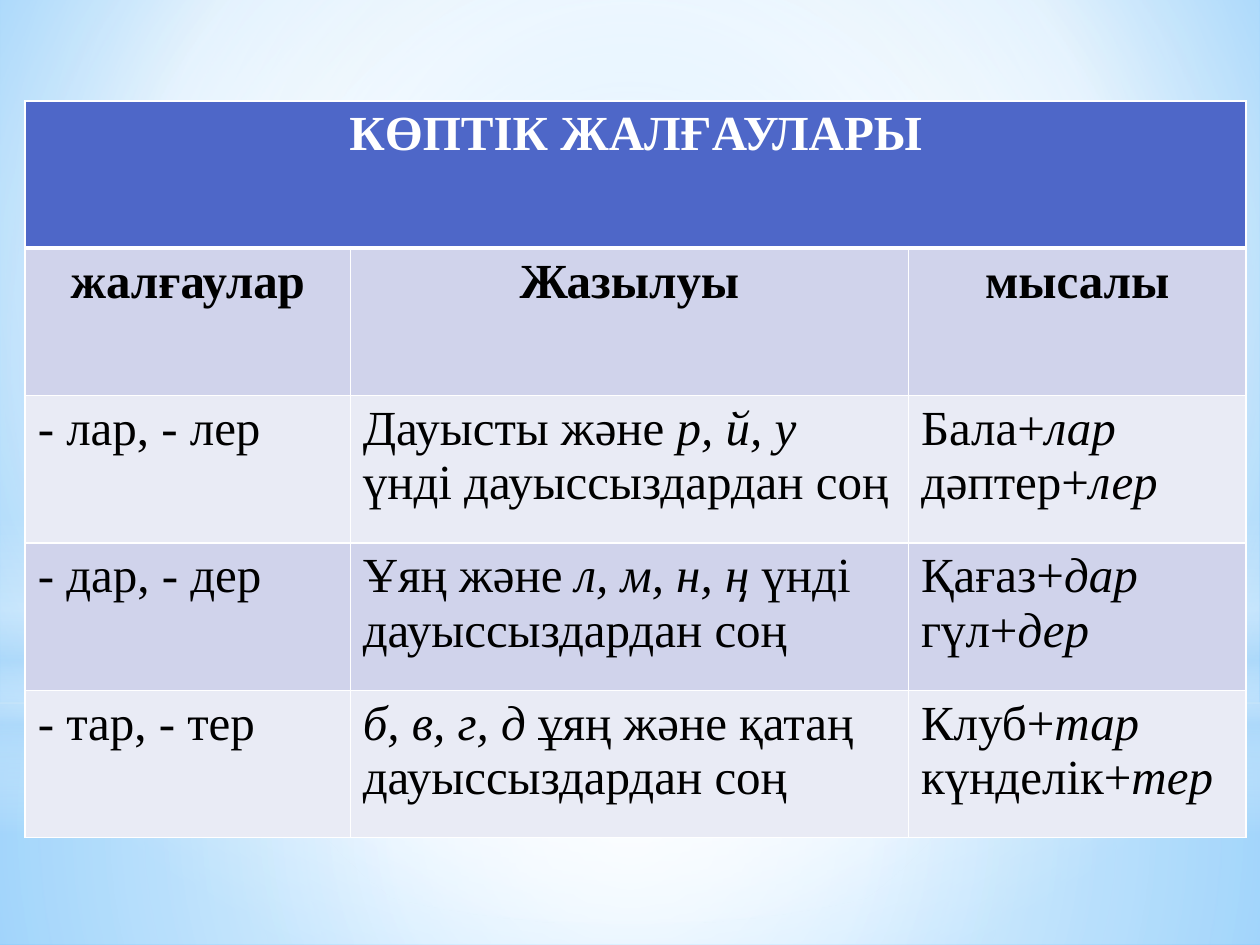
"""Build a slide with a table of Kazakh plural endings over a soft sky background."""
from lxml import etree
from pptx import Presentation
from pptx import util as u
from pptx.dml.color import RGBColor
from pptx.enum import shapes, text
from pptx.oxml.ns import qn

SCALE = 9144
COLORS = {
    "white": "FFFFFF", "black": "000000", "sky": "9ED5FF", "deep": "5BB9FF",
    "haze": "B4DCFA", "header": "4E67C8", "band": "D0D3EB", "pale": "E9EBF5",
}
CENTER = (50, 50, 50, 50)
BACKGROUND = [(0, "sky", 100), (60, "white", 100), (100, "deep", 100)]
LAYERS = [
    ("RECTANGLE", (0, 558, 1000, 192),
     [(0, "white", 91), (37, "white", 76), (100, "haze", 79)], CENTER),
    ("RECTANGLE", (0, 0, 1000, 558),
     [(0, "white", 89), (48, "white", 62), (100, "haze", 79)], CENTER),
    ("RECTANGLE", (0, 412, 1000, 250),
     [(0, "white", 0), (29, "white", 30), (45, "haze", 40),
      (55, "white", 26), (65, "haze", 60), (100, "white", 0)], None),
    ("OVAL", (0, 175, 1000, 558), [(0, "white", 100), (56, "white", 0)], CENTER),
]
TITLE = "КӨПТІК ЖАЛҒАУЛАРЫ"
HEADINGS = ["жалғаулар", "Жазылуы", "мысалы"]
ENDINGS = [
    (["- лар, - лер"],
     ["Дауысты және ", "р, й, у ", "үнді дауыссыздардан соң"],
     ["Бала+", "лар", " дәптер+", "лер"]),
    (["- дар, - дер"],
     ["Ұяң және ", "л, м, н, ң ", "үнді дауыссыздардан соң"],
     ["Қағаз+", "дар", " гүл+", "дер"]),
    (["- тар, - тер"],
     ["", "б, в, г, д ", "ұяң және қатаң дауыссыздардан соң"],
     ["Клуб+", "тар", " күнделік+", "тер"]),
]


class SlideBuilder:
    """Hold the text style and the current slide, and add elements to it."""

    font = "Times New Roman"
    size = 28

    def __init__(self, page):
        """Start drawing on the given slide."""
        self.page = page

    def gradient(self, owner, stops, focus):
        """Fill a shape or background with a circular or a vertical gradient."""
        fill = owner.element.find(".//" + qn("a:gradFill"))
        for child in list(fill):
            fill.remove(child)
        stop_list = etree.SubElement(fill, qn("a:gsLst"))
        for position, color, opacity in stops:
            stop = etree.SubElement(stop_list, qn("a:gs"), pos=str(position * 1000))
            tint = etree.SubElement(stop, qn("a:srgbClr"), val=COLORS[color])
            if opacity < 100:
                etree.SubElement(tint, qn("a:alpha"), val=str(opacity * 1000))
        if focus:
            circle = etree.SubElement(fill, qn("a:path"), path="circle")
            sides = {side: str(value * 1000) for side, value in zip("ltrb", focus)}
            etree.SubElement(circle, qn("a:fillToRect"), **sides)
        else:
            etree.SubElement(fill, qn("a:lin"), ang=str(90 * 60000), scaled="0")

    def background(self, stops, focus):
        """Paint the slide background."""
        self.page.background.fill.gradient()
        self.gradient(self.page, stops, focus)

    def layer(self, kind, area, stops, focus):
        """Add a borderless shape with a translucent gradient."""
        shape = self.page.shapes.add_shape(
            shapes.MSO_SHAPE[kind], *(value * SCALE for value in area))
        shape.shadow.inherit = False
        shape.line.fill.background()
        shape.fill.gradient()
        self.gradient(shape, stops, focus)

    def table(self, left, top, widths, heights):
        """Add a table with the given column widths and row heights."""
        frame = self.page.shapes.add_table(
            len(heights), len(widths), left * SCALE, top * SCALE,
            sum(widths) * SCALE, sum(heights) * SCALE)
        for column, width in zip(frame.table.columns, widths):
            column.width = u.Emu(width * SCALE)
        for row, height in zip(frame.table.rows, heights):
            row.height = u.Emu(height * SCALE)
        return frame.table

    def cell(self, cell, fill, top=1, bottom=1):
        """Give a cell its white borders and its fill."""
        properties = cell._tc.get_or_add_tcPr()
        for side, width in (("L", 1), ("R", 1), ("T", top), ("B", bottom)):
            line = etree.SubElement(properties, qn("a:ln" + side), w=str(u.Pt(width)))
            solid = etree.SubElement(line, qn("a:solidFill"))
            etree.SubElement(solid, qn("a:srgbClr"), val=COLORS["white"])
        cell.fill.solid()
        cell.fill.fore_color.rgb = RGBColor.from_string(COLORS[fill])

    def add_spans(self, cell, spans, color="black", heading=False):
        """Add runs that alternate between upright and italic."""
        para = cell.text_frame.paragraphs[0]
        if heading:
            para.alignment = text.PP_ALIGN.CENTER
        for index, words in enumerate(spans):
            if not words:
                continue
            span = para.add_run()
            span.text = words
            span.font.name = self.font
            span.font.size = u.Pt(self.size)
            span.font.bold = heading
            span.font.italic = index % 2 == 1
            span.font.color.rgb = RGBColor.from_string(COLORS[color])


def main():
    """Build and save the deck."""
    deck = Presentation()
    deck.slide_width, deck.slide_height = 1000 * SCALE, 750 * SCALE
    builder = SlideBuilder(deck.slides.add_slide(deck.slide_layouts[6]))
    builder.background(BACKGROUND, (20, 10, 20, 60))
    for layer in LAYERS:
        builder.layer(*layer)

    table = builder.table(20, 80, [258, 443, 268], [117] * 5)
    table.cell(0, 0).merge(table.cell(0, 2))
    for column in range(3):
        builder.cell(table.cell(0, column), "header", bottom=3)
    builder.add_spans(table.cell(0, 0), [TITLE], "white", heading=True)

    body = [[[heading] for heading in HEADINGS], *ENDINGS]
    for row, entries in enumerate(body, start=1):
        for column, spans in enumerate(entries):
            cell = table.cell(row, column)
            builder.cell(cell, "band" if row % 2 else "pale", top=3 if row == 1 else 1)
            builder.add_spans(cell, spans, heading=row == 1)
    deck.save("out.pptx")


if __name__ == "__main__":
    main()
